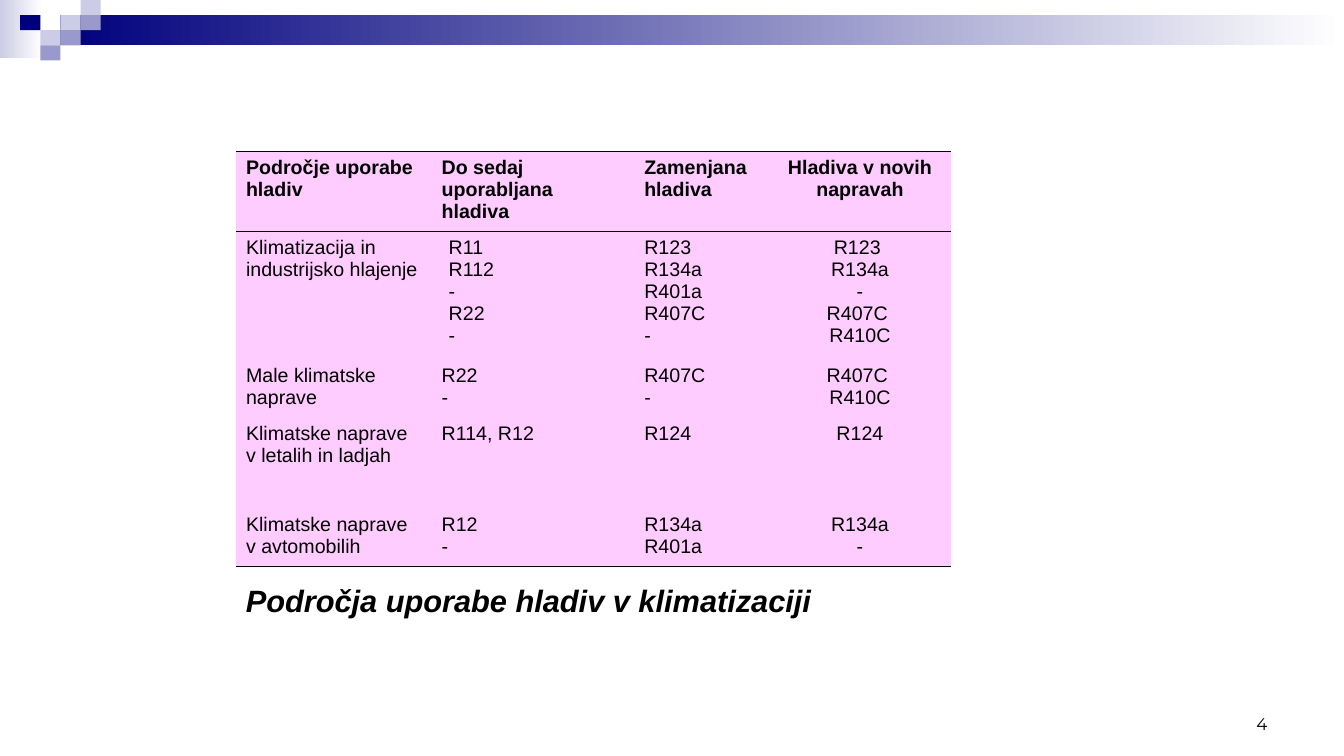
import pptx
import pptx.util
import pptx.dml.color
import pptx.enum.shapes
import pptx.enum.text
import pptx.oxml
import pptx.oxml.ns

RGB = pptx.dml.color.RGBColor
Inch = pptx.util.Inches
Align = pptx.enum.text.PP_ALIGN
Anchor = pptx.enum.text.MSO_ANCHOR

NAVY = RGB(0x00, 0x00, 0x7D)
MID = RGB(0x99, 0x99, 0xCC)
PALE = RGB(0xCC, 0xCC, 0xE6)
PINK = RGB(0xFF, 0xCC, 0xFF)
WHITE = RGB(0xFF, 0xFF, 0xFF)
BLACK = RGB(0x00, 0x00, 0x00)

WIDE, HIGH = 13.33, 7.5

# Each cell is a list of paragraphs
ROWS = [
    [[], [], [], []],
    [["Področje uporabe hladiv"], ["Do sedaj uporabljana hladiva"],
     ["Zamenjana hladiva"], ["Hladiva v novih napravah"]],
    [["Klimatizacija in industrijsko hlajenje"],
     ["R11", "R112", "-", "R22", "-"],
     ["R123", "R134a R401a R407C", "-"],
     ["R123 ", "R134a", "-", "R407C ", "R410C"]],
    [["Male klimatske naprave"], ["R22", "-"], ["R407C", "-"],
     ["R407C ", "R410C"]],
    [["Klimatske naprave v letalih in ladjah"], ["R114, R12"], ["R124"],
     ["R124"]],
    [["Klimatske naprave v avtomobilih"], ["R12", "-"], ["R134a R401a"],
     ["R134a", "-"]],
    [[], [], [], []],
]
COLS = [1.94, 2.01, 1.34, 1.8]
TALL = [0.82, 0.8, 1.27, 0.57, 0.91, 0.57, 0.82]
LEFT, TOP = 2.34, 0.68
HEAD, LAST = 1, len(ROWS) - 1
RULES = {HEAD, HEAD + 1, LAST}  # rows with a line along their top

# Header tiles: column, row, colour
TILE_W, TILE_H = 0.2, 0.15
TILES = [(3, 1, PALE), (4, 0, PALE), (4, 1, MID), (2, 2, PALE),
         (1, 1, NAVY), (3, 2, MID), (2, 3, MID)]
# Fading bars: left, top, width, height, first colour
BARS = [(0, 0, 0.42, 0.58, PALE), (0.6, 0.15, WIDE - 0.6, 0.3, NAVY)]

# Text boxes: text, place, anchor, wrap, alignment, font
NOTES = [
    ("4", (9.56, 6.83, 3.11, 0.5), Anchor.BOTTOM, True, Align.RIGHT,
     {"name": "Montserrat", "size": pptx.util.Pt(12)}),
    ("Področja uporabe hladiv v klimatizaciji", (LEFT, 5.72, 5.83, 0.47),
     Anchor.MIDDLE, False, Align.LEFT,
     {"name": "Arial", "size": pptx.util.Pt(22), "bold": True,
      "italic": True}),
]


def style(font, form):
    for key, value in form.items():
        setattr(font, key, value)
    font.color.rgb = BLACK


def add_block(slide, place, color, fade=False):
    kind = pptx.enum.shapes.MSO_SHAPE.RECTANGLE
    block = slide.shapes.add_shape(kind, *map(Inch, place))
    block.shadow.inherit = False
    block.line.fill.background()
    if fade:
        block.fill.gradient()
        block.fill.gradient_angle = 0
        for stop, tint in zip(block.fill.gradient_stops, (color, WHITE)):
            stop.color.rgb = tint
    else:
        block.fill.solid()
        block.fill.fore_color.rgb = color


def add_lines(cell, sides):
    """Draw the named sides of a cell and clear the others."""
    props = cell._tc.get_or_add_tcPr()
    for side in "LRTB":
        paint = (f'<a:solidFill><a:srgbClr val="{BLACK}"/></a:solidFill>'
                 if side in sides else "<a:noFill/>")
        props.append(pptx.oxml.parse_xml(
            f'<a:ln{side} {pptx.oxml.ns.nsdecls("a")} w="12700">'
            f'{paint}</a:ln{side}>'))


def fill_cell(cell, row, col):
    sides = ("T" if row in RULES else "") + ("B" if row + 1 in RULES else "")
    add_lines(cell, sides)
    cell.fill.solid()
    cell.fill.fore_color.rgb = PINK if HEAD <= row < LAST else WHITE
    frame = cell.text_frame
    frame.text = "\n".join(ROWS[row][col])
    for para in frame.paragraphs:
        para.alignment = Align.CENTER if col == 3 else Align.LEFT
        if (row, col) == (2, 1):
            para._p.get_or_add_pPr().set("indent", str(Inch(0.07)))
        for run in para.runs:
            style(run.font, {"name": "Arial", "size": pptx.util.Pt(14),
                             "bold": row == HEAD})


def add_grid(slide):
    table = slide.shapes.add_table(
        len(ROWS), len(COLS), Inch(LEFT), Inch(TOP),
        Inch(sum(COLS)), Inch(sum(TALL))).table
    table.first_row = table.horz_banding = False
    for col, width in enumerate(COLS):
        table.columns[col].width = Inch(width)
    for row, height in enumerate(TALL):
        table.rows[row].height = Inch(height)
        for col in range(len(COLS)):
            fill_cell(table.cell(row, col), row, col)


def add_note(slide, text, place, anchor, wrap, align, form):
    frame = slide.shapes.add_textbox(*map(Inch, place)).text_frame
    frame.word_wrap = wrap
    frame.vertical_anchor = anchor
    para = frame.paragraphs[0]
    para.alignment = align
    run = para.add_run()
    run.text = text
    style(run.font, form)


def main():
    deck = pptx.Presentation()
    deck.slide_width, deck.slide_height = Inch(WIDE), Inch(HIGH)
    slide = deck.slides.add_slide(deck.slide_layouts[6])
    for *place, color in BARS:
        add_block(slide, place, color, fade=True)
    for col, row, color in TILES:
        place = (col * TILE_W, row * TILE_H, TILE_W, TILE_H)
        add_block(slide, place, color)
    add_grid(slide)
    for note in NOTES:
        add_note(slide, *note)
    deck.save("out.pptx")


if __name__ == "__main__":
    main()
